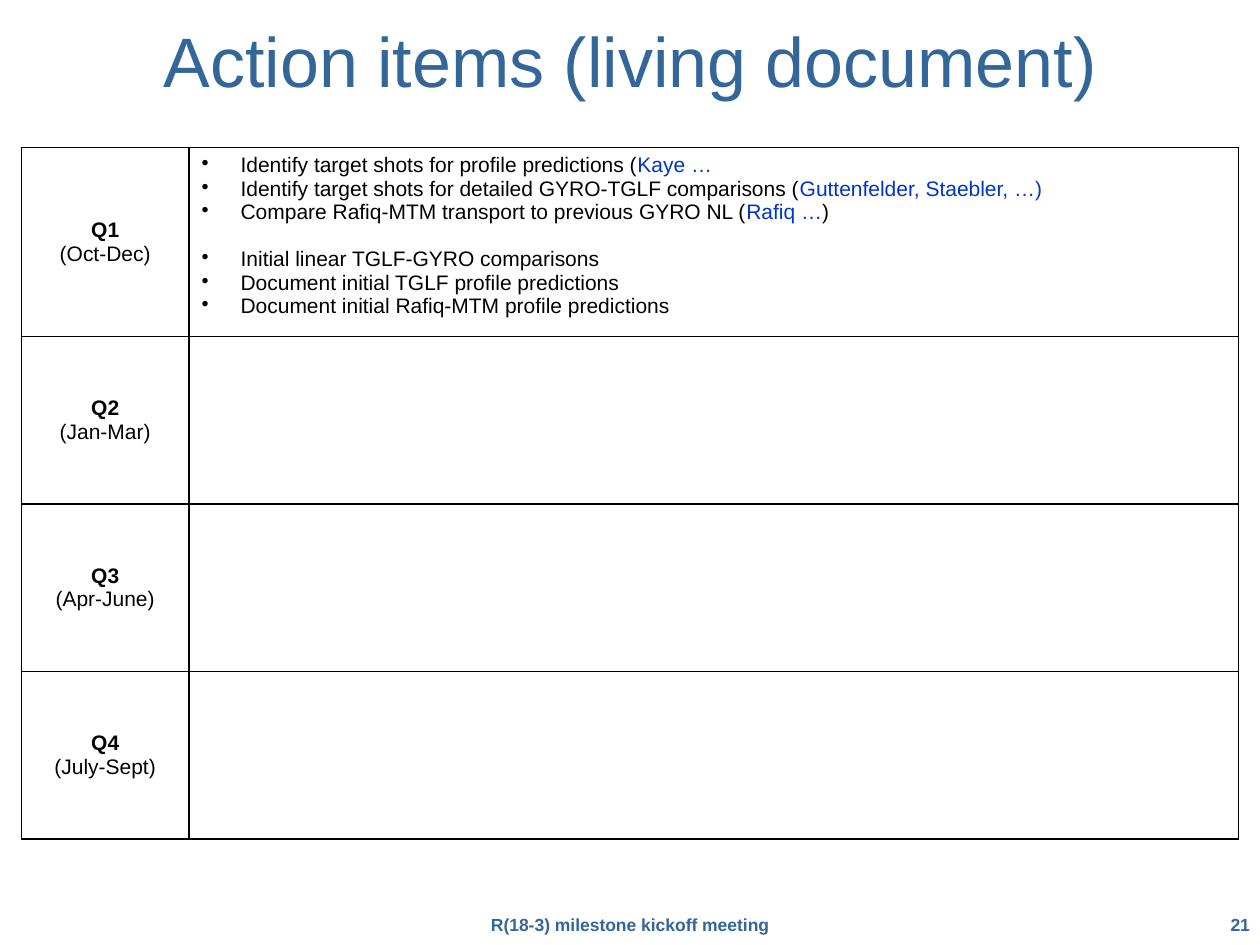
from dataclasses import dataclass

from lxml.etree import SubElement
from pptx import Presentation
from pptx.dml.color import RGBColor
from pptx.enum.text import MSO_ANCHOR as Anchor, PP_ALIGN as Align
from pptx.oxml.ns import qn
from pptx.util import Inches, Pt


@dataclass(frozen=True)
class Theme:
    font: str = "Arial"
    heading: RGBColor = RGBColor(0x33, 0x66, 0x99)
    body: RGBColor = RGBColor(0, 0, 0)
    people: RGBColor = RGBColor(0x00, 0x33, 0xCC)
    border: str = "000000"
    title_size: int = 40
    body_size: int = 12
    footer_size: int = 10
    group_gap: float = 13.4


THEME = Theme()

QUARTERS = [("Q1", "(Oct-Dec)"), ("Q2", "(Jan-Mar)"),
            ("Q3", "(Apr-June)"), ("Q4", "(July-Sept)")]

# Groups of first-quarter items; each item is (task, people, ending).
Q1_GROUPS = [
    [("Identify target shots for profile predictions (", "Kaye …", ""),
     ("Identify target shots for detailed GYRO-TGLF comparisons (",
      "Guttenfelder, Staebler, …)", ""),
     ("Compare Rafiq-MTM transport to previous GYRO NL (", "Rafiq …", ")")],
    [("Initial linear TGLF-GYRO comparisons", "", ""),
     ("Document initial TGLF profile predictions", "", ""),
     ("Document initial Rafiq-MTM profile predictions", "", "")],
]


def add_span(para, text, size, color, bold=False):
    span = para.add_run()
    span.text = text
    font = span.font
    font.name, font.size, font.bold = THEME.font, Pt(size), bold
    font.color.rgb = color


def add_label(page, place, text, size, align, side_inset=0, bold=False):
    """Add a one-line heading or footer text box."""
    box = page.shapes.add_textbox(*map(Inches, place))
    frame = box.text_frame
    frame.word_wrap = True
    frame.vertical_anchor = Anchor.MIDDLE
    frame.margin_left = frame.margin_right = Inches(side_inset)
    frame.margin_top = frame.margin_bottom = Inches(0.05)
    para = frame.paragraphs[0]
    para.alignment = align
    add_span(para, text, size, THEME.heading, bold)
    return para


def next_paragraph(frame, index):
    return frame.add_paragraph() if index else frame.paragraphs[0]


def style_cell(cell):
    """Give a cell thin borders on all sides and no fill."""
    props = cell._tc.get_or_add_tcPr()
    for side in ("lnL", "lnR", "lnT", "lnB"):
        line = SubElement(props, qn(f"a:{side}"), w=str(Pt(1)))
        fill = SubElement(line, qn("a:solidFill"))
        SubElement(fill, qn("a:srgbClr"), val=THEME.border)
    cell.fill.background()


def fill_quarter(cell, lines):
    cell.vertical_anchor = Anchor.MIDDLE
    for index, text in enumerate(lines):
        para = next_paragraph(cell.text_frame, index)
        para.alignment = Align.CENTER
        add_span(para, text, THEME.body_size, THEME.body, bold=index == 0)


def add_bullet(para):
    props = para._p.get_or_add_pPr()
    props.set("marL", str(Inches(0.31)))
    props.set("indent", str(Inches(-0.31)))
    SubElement(props, qn("a:buChar"), char="•")


def fill_items(cell, groups):
    count = 0
    for group in groups:
        for position, item in enumerate(group):
            para = next_paragraph(cell.text_frame, count)
            if count and position == 0:
                para.space_before = Pt(THEME.group_gap)
            add_bullet(para)
            for text, color in zip(item, (THEME.body, THEME.people, THEME.body)):
                if text:
                    add_span(para, text, THEME.body_size, color)
            count += 1


def add_schedule(page):
    frame = page.shapes.add_table(len(QUARTERS), 2, Inches(0.17), Inches(1.17),
                                  Inches(9.67), Inches(5.5))
    table = frame.table
    table.first_row = table.horz_banding = False
    for column, width in zip(table.columns, (1.33, 8.33)):
        column.width = Inches(width)
    for index, (row, quarter) in enumerate(zip(table.rows, QUARTERS)):
        row.height = Inches(1.33 if index else 1.5)
        for cell in row.cells:
            style_cell(cell)
        fill_quarter(row.cells[0], quarter)
    fill_items(table.cell(0, 1), Q1_GROUPS)


def main():
    deck = Presentation()
    deck.slide_width, deck.slide_height = Inches(10), Inches(7.5)
    page = deck.slides.add_slide(deck.slide_layouts[6])
    add_label(page, (9.25, 7.2, 0.67, 0.27), "21", THEME.footer_size,
              Align.RIGHT, bold=True)
    add_label(page, (1, 7.2, 8, 0.27), "R(18-3) milestone kickoff meeting",
              THEME.footer_size, Align.CENTER, bold=True)
    add_schedule(page)
    title = add_label(page, (0, 0, 10, 1.05), "Action items (living document)",
                      THEME.title_size, Align.CENTER, side_inset=0.05)
    title.line_spacing = 0.85
    deck.save("out.pptx")


if __name__ == "__main__":
    main()
